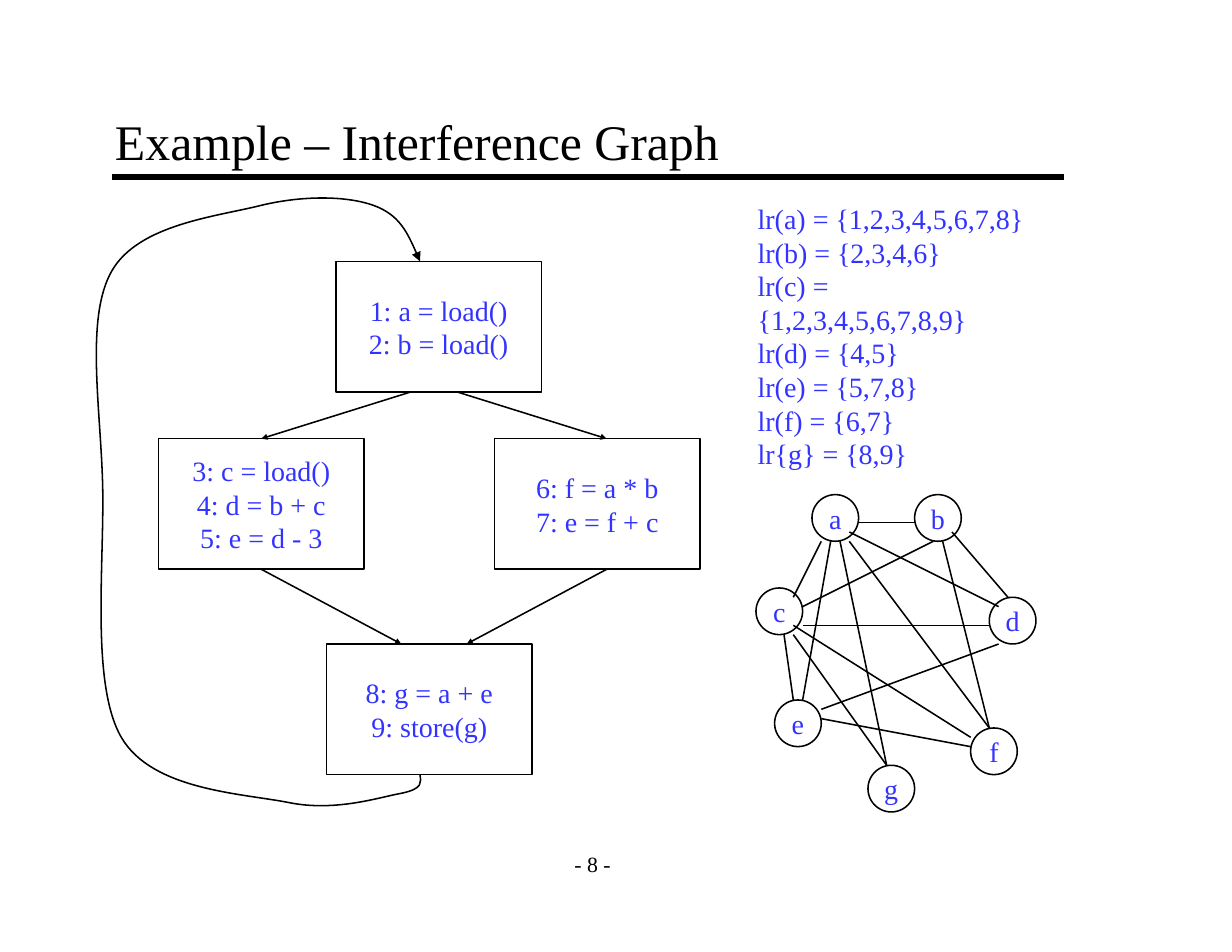
from lxml import etree
from pptx import Presentation
from pptx import util as u
from pptx.dml.color import RGBColor
from pptx.enum import shapes, text
from pptx.oxml import ns

COLORS = {"ink": "000000", "code": "3333FF"}
FONT = "Times New Roman"
GRID_CM = 2.54 / 12

BLOCK_SIZE = (22, 14)
BLOCKS = {
    "entry": (19, 0, ["1: a = load()", "2: b = load()"]),
    "left": (0, 19, ["3: c = load()", "4: d = b + c", "5: e = d - 3"]),
    "right": (36, 19, ["6: f = a * b", "7: e = f + c"]),
    "exit": (18, 41, ["8: g = a + e", "9: store(g)"]),
}
BRANCHES = [(27, 14, 11, 19), (32, 14, 48, 19), (11, 33, 26, 41), (48, 33, 33, 41)]
LOOP_BACK = [
    (28, 55),
    (28.1, 55.8), (28.4, 56.5), (26, 57),
    (23.7, 57.4), (19, 59), (14, 58),
    (9, 57), (-0.7, 56.7), (-4, 51),
    (-7.3, 45.3), (-5.8, 32.4), (-6, 24),
    (-6.2, 15.7), (-7.9, 6), (-5, 1),
    (-2.1, -4), (6.3, -4.8), (11, -6),
    (15.6, -7.1), (20.2, -7), (23, -6),
    (25.8, -5), (26.9, -2.6), (28, 0),
]

LIVE_RANGES = [
    "lr(a) = {1,2,3,4,5,6,7,8}", "lr(b) = {2,3,4,6}", "lr(c) = {1,2,3,4,5,6,7,8,9}",
    "lr(d) = {4,5}", "lr(e) = {5,7,8}", "lr(f) = {6,7}", "lr{g} = {8,9}",
]

NODE_SIZE = (5, 5)
NODES = {"a": (6, 0), "b": (17, 0), "c": (0, 10), "d": (25, 11),
         "e": (2, 22), "f": (23, 25), "g": (12, 29)}
EDGES = [
    (4, 11, 7, 5), (5, 12, 19, 5), (5, 14, 25, 14), (4, 14, 23, 26), (3, 15, 4, 22),
    (4, 15, 14, 29), (11, 3, 17, 3), (10, 4, 26, 12), (10, 5, 25, 25), (9, 5, 14, 29),
    (8, 5, 5, 22), (21, 4, 27, 11), (20, 5, 25, 25), (26, 16, 7, 23), (7, 24, 23, 27),
]


def grid(*steps):
    """Turn grid steps of a twelfth of an inch into lengths."""
    return [u.Cm(step * GRID_CM) for step in steps]


def color(name):
    """Look up a palette colour."""
    return RGBColor.from_string(COLORS[name])


def set_line(line, width=1):
    """Draw a solid ink line of the given width in points."""
    line.color.rgb = color("ink")
    line.width = u.Pt(width)


def add_arrowhead(shape, size="med"):
    """Put a triangle at the end of a line."""
    outline = shape.line._get_or_add_ln()
    etree.SubElement(outline, ns.qn("a:tailEnd"), type="triangle", w=size, len=size)


def write(shape, lines, size=18, name="code", align=text.PP_ALIGN.CENTER,
          anchor=text.MSO_ANCHOR.MIDDLE, wrap=False):
    """Fill a shape with one paragraph for each line."""
    frame = shape.text_frame
    frame.text = "\n".join(lines)
    frame.word_wrap = wrap
    frame.vertical_anchor = anchor
    for paragraph in frame.paragraphs:
        paragraph.alignment = align
        paragraph.font.name = FONT
        paragraph.font.size = u.Pt(size)
        paragraph.font.color.rgb = color(name)


def add_outlined(slide, kind, box, lines):
    """Add an unfilled, outlined shape with centred text."""
    shape = slide.shapes.add_shape(kind, *grid(*box))
    shape.shadow.inherit = False
    shape.fill.background()
    set_line(shape.line)
    write(shape, lines)
    return shape


def add_line(slide, ends, width=1):
    """Add a straight connector without a shadow."""
    connector = slide.shapes.add_connector(shapes.MSO_CONNECTOR.STRAIGHT, *grid(*ends))
    set_line(connector.line, width)
    etree.SubElement(connector._element.spPr, ns.qn("a:effectLst"))
    return connector


def shift(ends, left, top):
    """Move the two ends of a line by an origin."""
    x1, y1, x2, y2 = ends
    return left + x1, top + y1, left + x2, top + y2


def add_curve(slide, points):
    """Add an open Bezier curve from a start and triples of control points."""
    start, *rest = [grid(*point) for point in points]
    builder = slide.shapes.build_freeform(*start)
    builder.add_line_segments(rest, close=False)
    curve = builder.convert_to_shape()
    segments = list(curve._element.iter(ns.qn("a:lnTo")))
    for first in range(0, len(segments), 3):
        bezier = etree.SubElement(segments[first].getparent(), ns.qn("a:cubicBezTo"))
        for segment in segments[first:first + 3]:
            bezier.append(segment[0])
            segment.getparent().remove(segment)
    curve.shadow.inherit = False
    curve.fill.background()
    set_line(curve.line)
    return curve


def add_header(slide, left, top, width, height):
    """Place the title and the rule under it."""
    title = slide.shapes.title
    title.left, title.top, title.width, title.height = grid(left, top, width, height)
    write(title, ["Example – Interference Graph"], 32, "ink",
          text.PP_ALIGN.LEFT, text.MSO_ANCHOR.BOTTOM, True)
    frame = title.text_frame
    frame.margin_left = frame.margin_right = u.Cm(0.28)
    frame.margin_top = frame.margin_bottom = u.Cm(0.15)
    rule = top + height
    add_line(slide, (left + 1, rule, left + width + 1, rule), 4)


def add_flow_graph(slide, left, top):
    """Place the basic blocks, their branches and the loop edge."""
    blocks = {
        name: add_outlined(slide, shapes.MSO_SHAPE.RECTANGLE,
                           (left + x, top + y, *BLOCK_SIZE), lines)
        for name, (x, y, lines) in BLOCKS.items()
    }
    branches = [add_line(slide, shift(ends, left, top)) for ends in BRANCHES]
    for branch in branches:
        add_arrowhead(branch, "sm")
    branches[0].end_connect(blocks["left"], 0)
    branches[2].begin_connect(blocks["left"], 2)
    loop = add_curve(slide, [(left + x, top + y) for x, y in LOOP_BACK])
    add_arrowhead(loop)


def add_live_ranges(slide, left, top, width, height):
    """List the live range of each variable."""
    box = slide.shapes.add_textbox(*grid(left, top, width, height))
    write(box, LIVE_RANGES, align=text.PP_ALIGN.LEFT, anchor=text.MSO_ANCHOR.TOP)


def add_interference_graph(slide, left, top):
    """Place the variable nodes and the edges between them."""
    for name, (x, y) in NODES.items():
        add_outlined(slide, shapes.MSO_SHAPE.OVAL, (left + x, top + y, *NODE_SIZE), [name])
    for ends in EDGES:
        add_line(slide, shift(ends, left, top))


def add_page_number(slide, left, top, width, height):
    """Place the page number at the foot."""
    box = slide.shapes.add_textbox(*grid(left, top, width, height))
    write(box, ["- 8 -"], 14, "ink")


def main():
    """Build and save the slide."""
    presentation = Presentation()
    presentation.slide_width, presentation.slide_height = grid(132, 102)
    slide = presentation.slides.add_slide(presentation.slide_layouts[5])
    add_header(slide, 11, 11, 102, 8)
    add_flow_graph(slide, 17, 28)
    add_live_ranges(slide, 80, 21, 33, 26.4)
    add_interference_graph(slide, 81, 53)
    add_page_number(slide, 59, 90, 9, 5)
    presentation.save("out.pptx")


if __name__ == "__main__":
    main()
